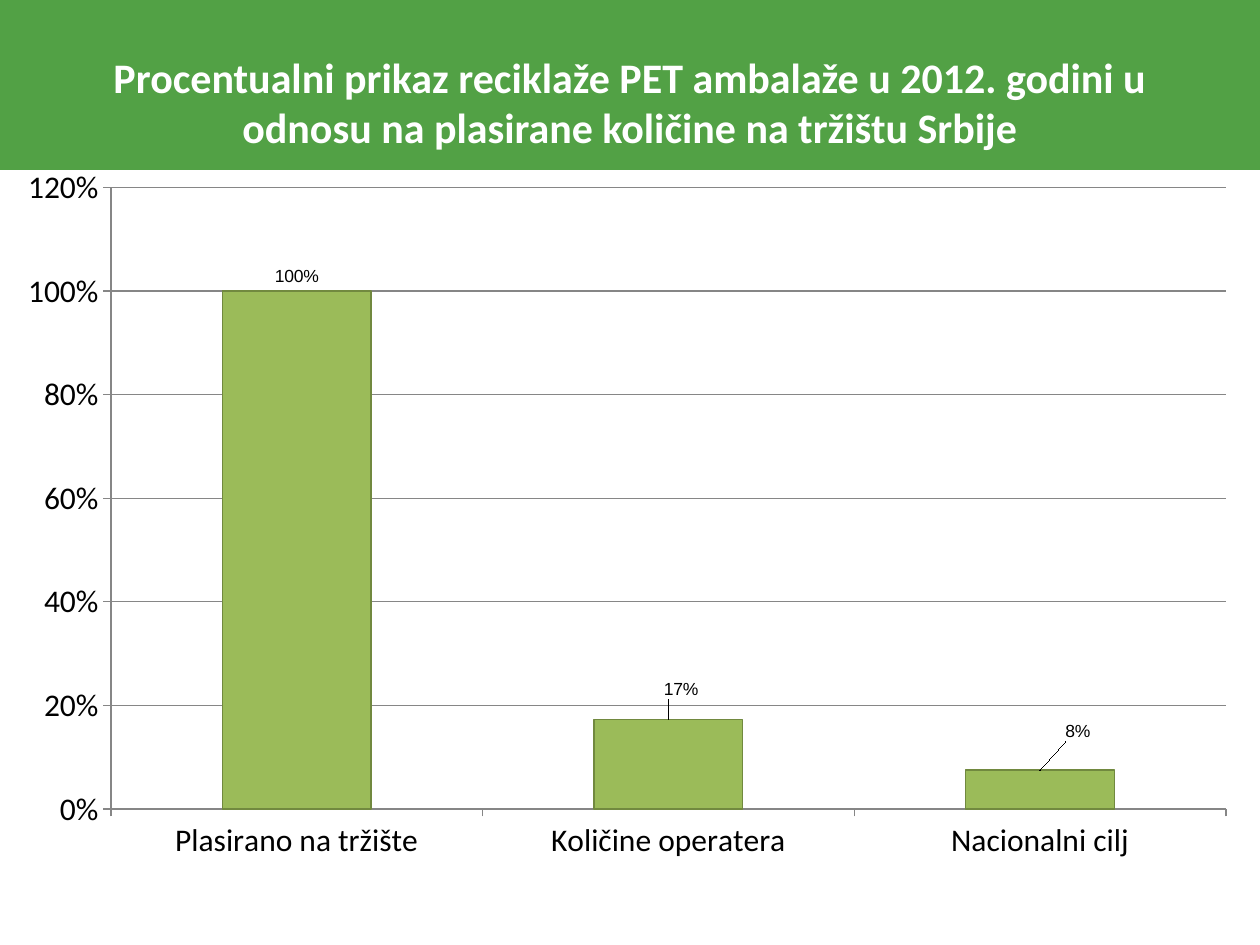
from lxml import etree
from pptx import Presentation
from pptx.chart.data import CategoryChartData
from pptx.dml.color import RGBColor
from pptx.enum.chart import XL_CHART_TYPE, XL_LABEL_POSITION, XL_TICK_MARK
from pptx.enum.shapes import MSO_SHAPE
from pptx.enum.text import MSO_ANCHOR, PP_ALIGN
from pptx.oxml.ns import qn
from pptx.util import Pt

COLUMNS = XL_CHART_TYPE.COLUMN_CLUSTERED
OUTSIDE_END = XL_LABEL_POSITION.OUTSIDE_END
CROSS = XL_TICK_MARK.OUTSIDE
NO_TICK = XL_TICK_MARK.NONE
RECTANGLE = MSO_SHAPE.RECTANGLE
MIDDLE = MSO_ANCHOR.MIDDLE
CENTER = PP_ALIGN.CENTER

TITLE = ("Procentualni prikaz reciklaže PET ambalaže u 2012. godini u "
         "odnosu na plasirane količine na tržištu Srbije")
SHARES = {"Plasirano na tržište": 1, "Količine operatera": 0.172, "Nacionalni cilj": 0.075}
LABEL_SHIFTS = [None, (0.01, -0.02), (0.03, -0.03)]


def color(hex_value):
    return RGBColor.from_string(hex_value)


def set_font(font, name, size, hex_value, bold=False):
    font.name = name
    font.size = Pt(size)
    font.bold = bold
    font.color.rgb = color(hex_value)


def manual_layout(**settings):
    layout = etree.Element(qn("c:layout"))
    manual = etree.SubElement(layout, qn("c:manualLayout"))
    for tag, value in settings.items():
        etree.SubElement(manual, qn(f"c:{tag}")).set("val", str(value))
    return layout


def add_header(slide, left, top, width, height):
    band = slide.shapes.add_shape(RECTANGLE, Pt(left), Pt(top), Pt(width), Pt(height))
    band.shadow.inherit = False
    band.fill.solid()
    band.fill.fore_color.rgb = color("52A145")
    band.line.color.rgb = color("52A145")
    band.line.width = Pt(2)

    title = slide.shapes.add_textbox(Pt(left + 36), Pt(top + 22), Pt(width - 72), Pt(72))
    frame = title.text_frame
    frame.word_wrap = True
    frame.vertical_anchor = MIDDLE
    paragraph = frame.paragraphs[0]
    paragraph.alignment = CENTER
    run = paragraph.add_run()
    run.text = TITLE
    set_font(run.font, "Calibri", 24, "FFFFFF", bold=True)


def style_axes(chart):
    value_axis = chart.value_axis
    value_axis.minimum_scale = 0
    value_axis.maximum_scale = 1.2
    value_axis.major_unit = 0.2
    value_axis.has_major_gridlines = True
    value_axis.tick_labels.number_format = "0%"
    value_axis.tick_labels.number_format_is_linked = False
    for axis in (chart.category_axis, value_axis):
        axis.major_tick_mark = CROSS
        axis.minor_tick_mark = NO_TICK
    for line in (chart.category_axis.format.line, value_axis.format.line,
                 value_axis.major_gridlines.format.line):
        line.color.rgb = color("868686")
        line.width = Pt(0.75)


def label_columns(chart, series):
    for index in range(len(SHARES)):
        label = series.points[index].data_label
        label.position = OUTSIDE_END
        set_font(label.font, "Arial", 10, "000000")
    labels = chart.element.iter(qn("c:dLbl"))
    for label, shift in zip(labels, LABEL_SHIFTS):
        if shift:
            label.insert(1, manual_layout(x=shift[0], y=shift[1]))


def add_recycling_chart(slide, left, top, width, height):
    data = CategoryChartData(number_format="0%")
    data.categories = list(SHARES)
    data.add_series("Series 1", list(SHARES.values()))
    chart = slide.shapes.add_chart(
        COLUMNS, Pt(left), Pt(top), Pt(width), Pt(height), data).chart
    chart.has_legend = False
    chart.has_title = False
    set_font(chart.font, "Calibri", 18, "000000")
    style_axes(chart)

    plot = chart.plots[0]
    plot.gap_width = 150
    plot.vary_by_categories = False
    series = plot.series[0]
    series.format.fill.solid()
    series.format.fill.fore_color.rgb = color("9BBB59")
    series.format.line.color.rgb = color("71893F")
    series.format.line.width = Pt(0.75)
    label_columns(chart, series)

    plot_area = next(chart.element.iter(qn("c:plotArea")))
    for layout in plot_area.findall(qn("c:layout")):
        plot_area.remove(layout)
    plot_area.insert(0, manual_layout(
        layoutTarget="inner", xMode="edge", yMode="edge",
        x=0.088, y=0.025, w=0.885, h=0.8))


def main():
    presentation = Presentation()
    presentation.slide_width = Pt(720)
    presentation.slide_height = Pt(540)
    slide = presentation.slides.add_slide(presentation.slide_layouts[6])
    header_height = 96
    add_header(slide, 0, 0, 720, header_height)
    add_recycling_chart(slide, 0, header_height, 720, 540 - header_height)
    presentation.save("out.pptx")


if __name__ == "__main__":
    main()
